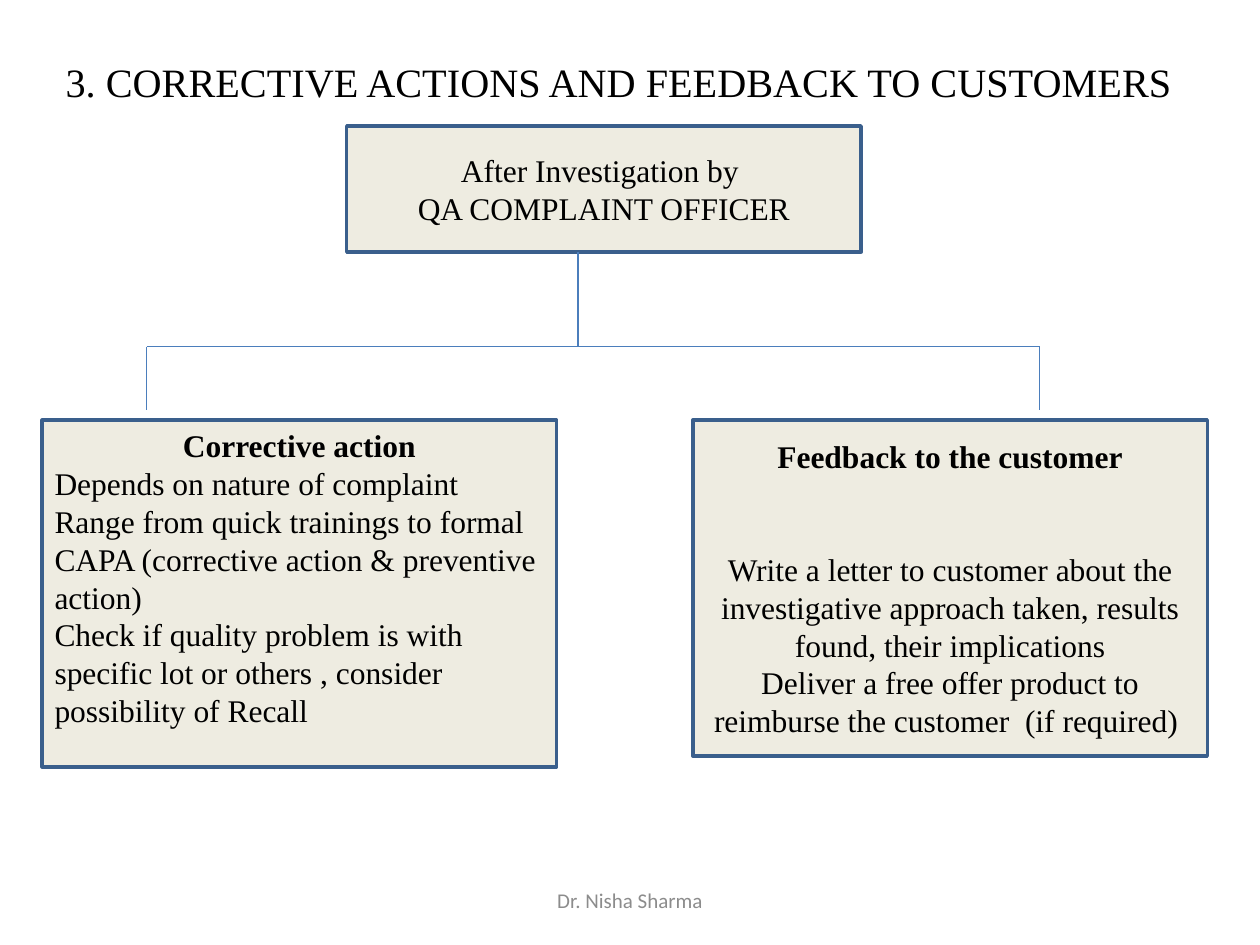
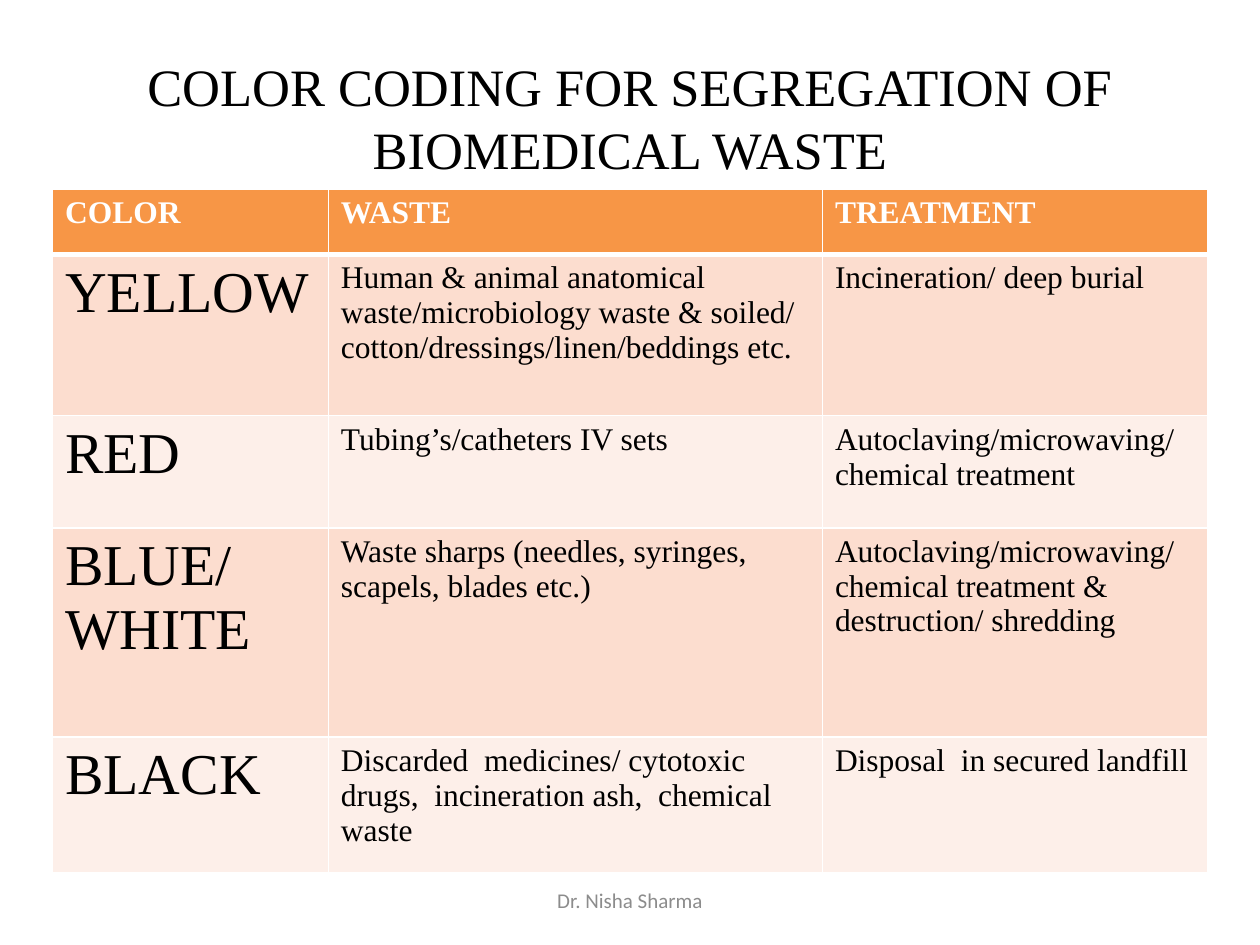
from lxml.etree import SubElement
from pptx import Presentation
from pptx.dml.color import RGBColor
from pptx.enum.shapes import MSO_CONNECTOR, MSO_SHAPE
from pptx.enum.text import MSO_ANCHOR, PP_ALIGN
from pptx.oxml.ns import qn
from pptx.util import Cm, Pt

BLACK = RGBColor(0x00, 0x00, 0x00)
WHITE = RGBColor(0xFF, 0xFF, 0xFF)
GREY = RGBColor(0x8C, 0x8C, 0x8C)
CREAM = RGBColor(0xEE, 0xEC, 0xE1)
BOX_BLUE = RGBColor(0x3A, 0x5F, 0x8C)
LINE_BLUE = RGBColor(0x4B, 0x7E, 0xBC)
ORANGE = RGBColor(0xF7, 0x96, 0x46)
ROW_FILLS = (RGBColor(0xFC, 0xDD, 0xCF), RGBColor(0xFD, 0xEF, 0xE9))

SERIF = "Times New Roman"
SANS = "Calibri"
BODY_SIZE = 18
COLOR_SIZE = 33
FOOTER = "Dr. Nisha Sharma"

FEEDBACK_TITLE = "3. CORRECTIVE ACTIONS AND FEEDBACK TO CUSTOMERS"
INVESTIGATION = ["After Investigation by ", "QA COMPLAINT OFFICER"]
CORRECTIVE_HEADING = "Corrective action"
CORRECTIVE = [
    "Depends on nature of complaint",
    "Range from quick trainings to formal CAPA (corrective action & preventive action)",
    "Check if quality problem is with specific lot or others , consider possibility of Recall",
]
CUSTOMER_HEADING = "Feedback to the customer"
CUSTOMER = [
    "Write a letter to customer about the investigative approach taken, results found, "
    "their implications",
    "Deliver a free offer product to reimburse the customer  (if required) ",
]

WASTE_TITLE = "COLOR CODING FOR SEGREGATION OF BIOMEDICAL WASTE"
WASTE_HEADER = ("COLOR", "WASTE", "TREATMENT")
WASTE_ROWS = [
    (["YELLOW"],
     ["Human & animal anatomical waste/microbiology waste & soiled/ "
      "cotton/dressings/linen/beddings etc."],
     ["Incineration/ deep burial"]),
    (["RED"],
     ["Tubing’s/catheters IV sets"],
     ["Autoclaving/microwaving/ chemical treatment"]),
    (["BLUE/", "WHITE"],
     ["Waste sharps (needles, syringes, scapels, blades etc.)"],
     ["Autoclaving/microwaving/ chemical treatment &  destruction/ shredding"]),
    (["BLACK"],
     ["Discarded  medicines/ cytotoxic drugs,  incineration ash,  chemical  waste"],
     ["Disposal  in secured landfill"]),
]
COLUMN_WIDTHS = (5.56, 9.96, 7.77)
ROW_HEIGHTS = (1.32, 3.25, 2.26, 4.22, 2.74)

BOX_WIDTH = 10.37
BOX_TOP = 8.47
TRUNK_X, LEFT_X, RIGHT_X = 11.65, 2.96, 20.96
TRUNK_TOP, BRANCH_Y, BRANCH_END = 5.08, 6.99, 8.26


def write(frame, texts, size=BODY_SIZE, color=BLACK, bold=False, align=PP_ALIGN.LEFT,
          font=SERIF, append=False):
    paragraphs = []
    for index, text in enumerate(texts):
        first = index == 0 and not append
        paragraph = frame.paragraphs[0] if first else frame.add_paragraph()
        paragraph.alignment = align
        run = paragraph.add_run()
        run.text = text
        run.font.name = font
        run.font.size = Pt(size)
        run.font.bold = bold
        run.font.color.rgb = color
        paragraphs.append(paragraph)
    return paragraphs


def add_slide(presentation, title, size, left, top, width, height):
    slide = presentation.slides.add_slide(presentation.slide_layouts[5])
    shape = slide.shapes.title
    shape.left, shape.top, shape.width, shape.height = map(Cm, (left, top, width, height))
    shape.text_frame.vertical_anchor = MSO_ANCHOR.MIDDLE
    write(shape.text_frame, [title], size, align=PP_ALIGN.CENTER)
    footer = slide.shapes.add_textbox(Cm(8.68), Cm(17.64), Cm(8.04), Cm(1.02)).text_frame
    footer.word_wrap = True
    footer.vertical_anchor = MSO_ANCHOR.MIDDLE
    write(footer, [FOOTER], 12, GREY, align=PP_ALIGN.CENTER, font=SANS)
    return slide


def add_box(slide, left, top, height, anchor=MSO_ANCHOR.MIDDLE):
    box = slide.shapes.add_shape(
        MSO_SHAPE.RECTANGLE, Cm(left), Cm(top), Cm(BOX_WIDTH), Cm(height))
    box.shadow.inherit = False
    box.fill.solid()
    box.fill.fore_color.rgb = CREAM
    box.line.color.rgb = BOX_BLUE
    box.line.width = Pt(2)
    box.text_frame.word_wrap = True
    box.text_frame.vertical_anchor = anchor
    return box.text_frame


def add_line(slide, *ends):
    line = slide.shapes.add_connector(MSO_CONNECTOR.STRAIGHT, *map(Cm, ends))
    line.line.color.rgb = LINE_BLUE
    line.line.width = Pt(0.75)
    SubElement(line._element.spPr, qn("a:effectLst"))


def style_cell(cell, fill, bottom_width):
    properties = cell._tc.get_or_add_tcPr()
    for side, width in (("L", 1), ("R", 1), ("T", 1), ("B", bottom_width)):
        border = SubElement(properties, qn(f"a:ln{side}"), w=str(Pt(width)))
        solid = SubElement(border, qn("a:solidFill"))
        SubElement(solid, qn("a:srgbClr"), val=str(WHITE))
    cell.fill.solid()
    cell.fill.fore_color.rgb = fill


def build_feedback(presentation):
    slide = add_slide(presentation, FEEDBACK_TITLE, 23, 1.06, 0.84, 22.86, 1.59)
    write(add_box(slide, 6.99, 2.54, 2.54), INVESTIGATION, align=PP_ALIGN.CENTER)
    add_line(slide, TRUNK_X, TRUNK_TOP, TRUNK_X, BRANCH_Y)
    add_line(slide, LEFT_X, BRANCH_Y, RIGHT_X, BRANCH_Y)
    for x in (LEFT_X, RIGHT_X):
        add_line(slide, x, BRANCH_Y, x, BRANCH_END)

    corrective = add_box(slide, 0.85, BOX_TOP, 6.99, MSO_ANCHOR.TOP)
    write(corrective, [CORRECTIVE_HEADING], bold=True, align=PP_ALIGN.CENTER)
    write(corrective, CORRECTIVE, append=True)

    customer = add_box(slide, 13.97, BOX_TOP, 6.77)
    write(customer, [CUSTOMER_HEADING], bold=True, align=PP_ALIGN.CENTER)
    letter, offer = write(customer, CUSTOMER, align=PP_ALIGN.CENTER, append=True)
    letter.space_before = Pt(43)


def build_waste(presentation):
    slide = add_slide(presentation, WASTE_TITLE, 30, 1.27, 0.76, 22.86, 3.18)
    table = slide.shapes.add_table(
        len(ROW_HEIGHTS), len(COLUMN_WIDTHS), Cm(1.06), Cm(3.81),
        Cm(sum(COLUMN_WIDTHS)), Cm(sum(ROW_HEIGHTS))).table
    for column, width in zip(table.columns, COLUMN_WIDTHS):
        column.width = Cm(width)
    for row, height in zip(table.rows, ROW_HEIGHTS):
        row.height = Cm(height)
    for column, text in enumerate(WASTE_HEADER):
        cell = table.cell(0, column)
        style_cell(cell, ORANGE, 3)
        write(cell.text_frame, [text], color=WHITE, bold=True)
    for row, texts in enumerate(WASTE_ROWS):
        for column, lines in enumerate(texts):
            cell = table.cell(row + 1, column)
            style_cell(cell, ROW_FILLS[row % 2], 1)
            write(cell.text_frame, lines, BODY_SIZE if column else COLOR_SIZE)


def main():
    presentation = Presentation()
    presentation.slide_width, presentation.slide_height = Cm(25.4), Cm(19.05)
    build_feedback(presentation)
    build_waste(presentation)
    presentation.save("out.pptx")


if __name__ == "__main__":
    main()
